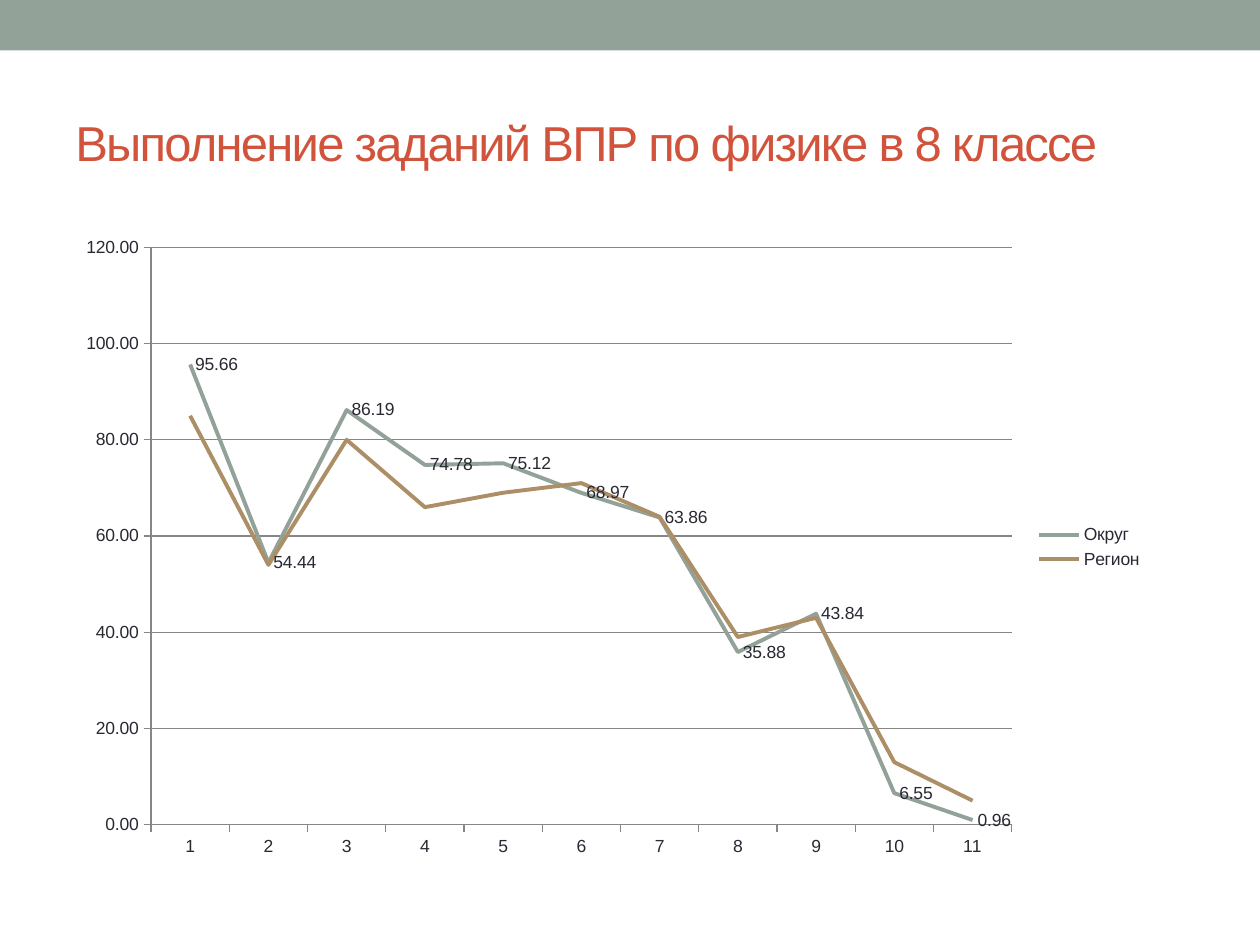
from dataclasses import dataclass

from pptx import Presentation
from pptx import util as u
from pptx.chart.data import CategoryChartData
from pptx.dml.color import RGBColor
from pptx.enum import chart as ch, shapes, text


@dataclass(frozen=True)
class Theme:
    font: str = "Arial"
    title_size: float = 28
    chart_size: float = 10
    title: str = "D2533C"
    ink: str = "292934"
    axis: str = "868686"
    band: str = "93A299"
    series: tuple = ("93A299", "AD8F67")


class Deck:
    columns, rows = 100, 75

    def __init__(self, theme, width=10, height=7.5):
        self.theme = theme
        self.prs = Presentation()
        self.prs.slide_width = u.Inches(width)
        self.prs.slide_height = u.Inches(height)
        self.s = self.prs.slides.add_slide(self.prs.slide_layouts[6])

    def box(self, x, y, w, h):
        column = self.prs.slide_width / self.columns
        row = self.prs.slide_height / self.rows
        return [u.Emu(round(v * cell)) for v, cell in zip((x, y, w, h), (column, row) * 2)]

    def font(self, font, size, color):
        font.name = self.theme.font
        font.size = u.Pt(size)
        font.color.rgb = RGBColor.from_string(color)

    def line(self, fmt, color, width):
        fmt.line.color.rgb = RGBColor.from_string(color)
        fmt.line.width = u.Pt(width)

    def band(self, *place):
        sp = self.s.shapes.add_shape(shapes.MSO_SHAPE.RECTANGLE, *self.box(*place))
        sp.shadow.inherit = False
        sp.fill.solid()
        sp.fill.fore_color.rgb = RGBColor.from_string(self.theme.band)
        sp.line.fill.background()

    def title(self, words, *place, spacing=-1):
        tf = self.s.shapes.add_textbox(*self.box(*place)).text_frame
        tf.word_wrap = True
        tf.vertical_anchor = text.MSO_ANCHOR.MIDDLE
        p = tf.paragraphs[0]
        self.font(p.font, self.theme.title_size, self.theme.title)
        r = p.add_run()
        r.text = words
        r._r.get_or_add_rPr().set("spc", str(spacing * 100))

    def line_chart(self, categories, series, labelled, *place):
        data = CategoryChartData(number_format="0.00")
        data.categories = categories
        for name, values in series.items():
            data.add_series(name, values)
        chart = self.s.shapes.add_chart(ch.XL_CHART_TYPE.LINE, *self.box(*place), data).chart
        self.font(chart.font, self.theme.chart_size, self.theme.ink)
        chart.has_title = False
        chart.has_legend = True
        chart.legend.position = ch.XL_LEGEND_POSITION.RIGHT
        chart.legend.include_in_layout = False

        for axis in (chart.category_axis, chart.value_axis):
            axis.major_tick_mark = ch.XL_TICK_MARK.OUTSIDE
            axis.minor_tick_mark = ch.XL_TICK_MARK.NONE
            self.line(axis.format, self.theme.axis, 0.75)
        axis = chart.value_axis
        axis.minimum_scale, axis.maximum_scale, axis.major_unit = 0, 120, 20
        axis.tick_labels.number_format = "0.00"
        axis.tick_labels.number_format_is_linked = False
        axis.has_major_gridlines = True
        self.line(axis.major_gridlines.format, self.theme.axis, 0.75)

        plot = chart.plots[0]
        plot.vary_by_categories = False
        for item, color in zip(plot.series, self.theme.series):
            item.smooth = False
            item.marker.style = ch.XL_MARKER_STYLE.NONE
            self.line(item.format, color, 2.25)
            if item.name == labelled:
                labels = item.data_labels
                labels.show_value = True
                labels.number_format = "0.00"
                labels.number_format_is_linked = False
                labels.position = ch.XL_LABEL_POSITION.RIGHT
                self.font(labels.font, self.theme.chart_size, self.theme.ink)


def main():
    deck = Deck(Theme())
    deck.band(0, 0, deck.columns, 4)
    deck.title("Выполнение заданий ВПР по физике в 8 классе", 5, 5.85, 90, 10.8)
    results = {
        "Округ": (95.66, 54.44, 86.19, 74.78, 75.12, 68.97, 63.86, 35.88, 43.84, 6.55, 0.96),
        "Регион": (85, 54, 80, 66, 69, 71, 64, 39, 43, 13, 5),
    }
    tasks = [str(n) for n in range(1, 12)]
    deck.line_chart(tasks, results, "Округ", 5.13, 17.83, 86.6, 51.2)
    deck.prs.save("out.pptx")


if __name__ == "__main__":
    main()
